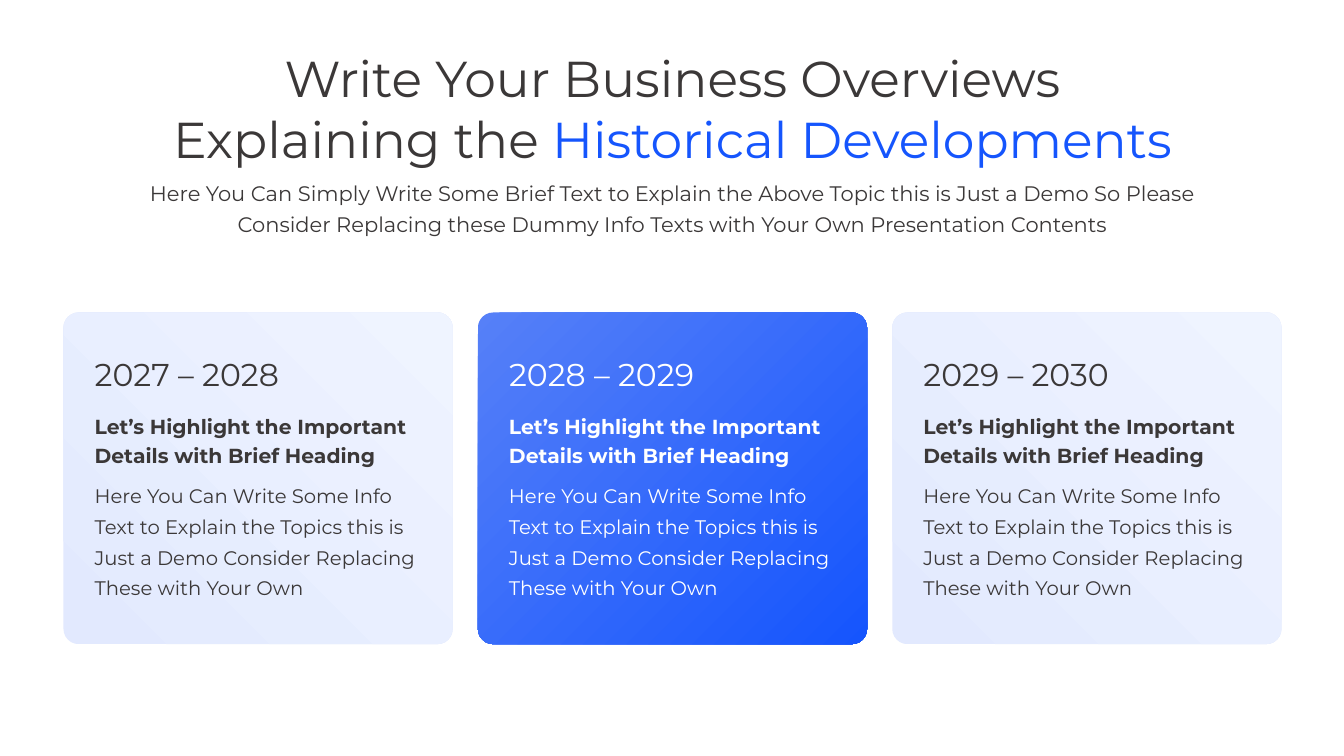
from lxml import etree
from pptx import Presentation
from pptx.dml.color import RGBColor
from pptx.enum.shapes import MSO_SHAPE
from pptx.enum.text import MSO_AUTO_SIZE, PP_ALIGN
from pptx.oxml.ns import qn
from pptx.util import Inches, Pt

ROUNDED = MSO_SHAPE.ROUNDED_RECTANGLE
LEFT, CENTER = PP_ALIGN.LEFT, PP_ALIGN.CENTER
GROW = MSO_AUTO_SIZE.SHAPE_TO_FIT_TEXT

FONT = "Montserrat"
COLORS = {
    "text": "3B3838",
    "white": "FFFFFF",
    "blue": "1555FD",
    "soft_blue": "5680F8",
    "pale": "E2E9FE",
    "paler": "EFF4FF",
}

TITLE = "Write Your Business Overviews\nExplaining the "
TITLE_ACCENT = "Historical Developments"
SUBTITLE = (
    "Here You Can Simply Write Some Brief Text to Explain the Above Topic this is Just a Demo So Please\n"
    "Consider Replacing these Dummy Info Texts with Your Own Presentation Contents"
)
PERIODS = ["2027 – 2028", "2028 – 2029", "2029 – 2030"]
HIGHLIGHTED = 1
HEADING = "Let’s Highlight the Important\vDetails with Brief Heading"
BODY = (
    "Here You Can Write Some Info\n"
    "Text to Explain the Topics this is\n"
    "Just a Demo Consider Replacing\n"
    "These with Your Own"
)

CARD_LEFT, CARD_TOP, CARD_WIDTH, CARD_HEIGHT = 0.63, 3.1, 3.86, 3.29
CARD_STEP = 4.11


def rgb(name):
    return RGBColor.from_string(COLORS[name])


def set_gradient(fill, start, end, angle):
    """Two-stop linear gradient; the angle runs counter-clockwise."""
    fill.gradient()
    fill.gradient_angle = angle
    for stop, name in zip(fill.gradient_stops, (start, end)):
        stop.color.rgb = rgb(name)


def make_radial(sp):
    """Turn a linear gradient into a circle centred on the lower right corner."""
    grad = sp.fill._xPr.find(qn("a:gradFill"))
    lin = grad.find(qn("a:lin"))
    circle = etree.Element(qn("a:path"), {"path": "circle"})
    etree.SubElement(circle, qn("a:fillToRect"), {"l": "100000", "t": "100000"})
    grad.replace(lin, circle)


def style_run(r, size, color, bold=False):
    r.font.name = FONT
    r.font.size = Pt(size)
    r.font.bold = bold
    r.font.color.rgb = rgb(color)


def add_text(slide, box, text, size, color="text", bold=False, spacing=None, align=LEFT):
    sp = slide.shapes.add_textbox(*map(Inches, box))
    tf = sp.text_frame
    tf.word_wrap = False
    tf.auto_size = GROW
    tf.text = text
    for p in tf.paragraphs:
        p.alignment = align
        if spacing:
            p.line_spacing = Pt(spacing)
        for r in p.runs:
            style_run(r, size, color, bold)
    return tf


def add_header(slide, left, top, width):
    # Two-line title ending in a gradient accent
    tf = add_text(slide, (left, top, width, 1.31), TITLE, 36, align=CENTER)
    r = tf.paragraphs[-1].add_run()
    r.text = TITLE_ACCENT
    style_run(r, 36, "blue")
    set_gradient(r.font.fill, "blue", "soft_blue", 180)

    # Subtitle
    add_text(slide, (left + 0.13, top + 1.27, width - 0.26, 0.69), SUBTITLE, 15,
             spacing=22, align=CENTER)


def add_card(slide, left, top, width, height, period, highlighted):
    # Panel
    sp = slide.shapes.add_shape(ROUNDED, *map(Inches, (left, top, width, height)))
    sp.adjustments[0] = 0.046
    sp.shadow.inherit = False
    sp.line.fill.background()
    if highlighted:
        set_gradient(sp.fill, "blue", "soft_blue", 0)
        make_radial(sp)
    else:
        set_gradient(sp.fill, "pale", "paler", 45)

    # Period, heading and body
    color = "white" if highlighted else "text"
    x, text_width = left + 0.21, width - 0.43
    add_text(slide, (x, top + 0.37, 2.15, 0.48), period, 22.5, color)
    add_text(slide, (x, top + 0.91, text_width, 0.67), HEADING, 14.5, color, bold=True, spacing=21)
    add_text(slide, (x, top + 1.58, text_width, 1.31), BODY, 14, color, spacing=22)


def main():
    prs = Presentation()
    prs.slide_width, prs.slide_height = Inches(13.33), Inches(7.5)
    slide = prs.slides.add_slide(prs.slide_layouts[6])

    add_header(slide, 1.11, 0.42, 11.12)
    for i, period in enumerate(PERIODS):
        add_card(slide, CARD_LEFT + i * CARD_STEP, CARD_TOP, CARD_WIDTH, CARD_HEIGHT,
                 period, i == HIGHLIGHTED)

    prs.save("out.pptx")


if __name__ == "__main__":
    main()
